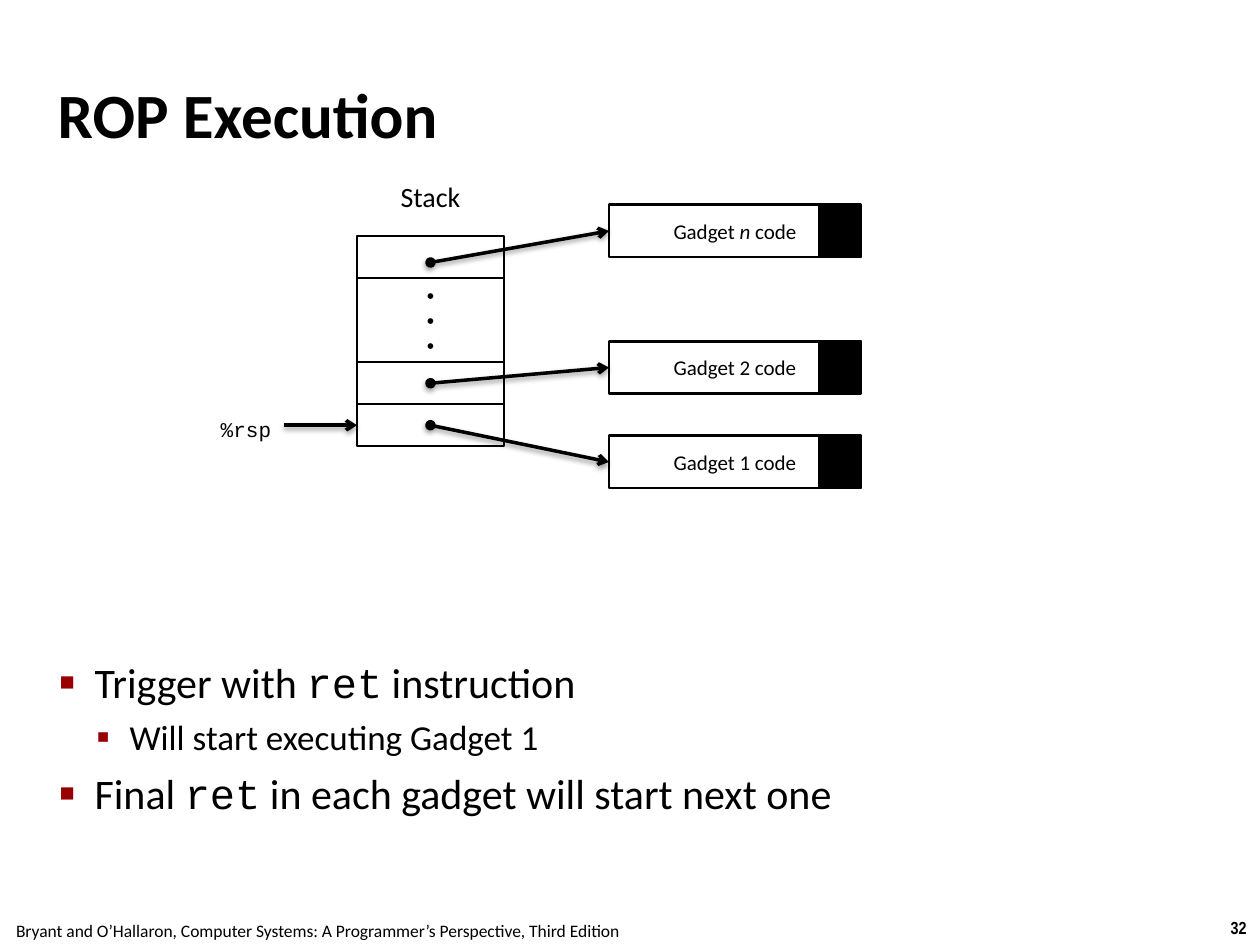
from lxml import etree
from pptx import Presentation
from pptx.dml.color import RGBColor
from pptx.enum import shapes, text
from pptx.oxml import ns
from pptx.util import Pt

INK = {"black": "000000", "red": "990000"}
ALIGN = text.PP_ALIGN
MID = text.MSO_ANCHOR.MIDDLE


def color(name):
    return RGBColor.from_string(INK[name])


def sub(node, tag, **attrs):
    return etree.SubElement(node, ns.qn("a:" + tag), attrs)


class Deck:
    font = "Calibri"
    mono = "Courier New"

    def __init__(self):
        self.prs = Presentation()
        self.prs.slide_width, self.prs.slide_height = Pt(720), Pt(540)
        self.slide = self.prs.slides.add_slide(self.prs.slide_layouts[1])

    def style(self, run, size, font=None, bold=False, italic=False):
        run.font.size = Pt(size)
        run.font.name = font or self.font
        run.font.bold = bold
        run.font.italic = italic
        run.font.color.rgb = color("black")

    def fill_in(self, para, words, size, align=ALIGN.CENTER, mark=None, **look):
        para.alignment = align
        for i, part in enumerate(words.split("|")):
            run = para.add_run()
            run.text = part
            self.style(run, size, **(mark if i % 2 else look))

    def frame(self, shape, inset):
        frame = shape.text_frame
        frame.auto_size = text.MSO_AUTO_SIZE.NONE
        frame.margin_left = frame.margin_right = Pt(inset)
        frame.margin_top = frame.margin_bottom = Pt(inset)
        return frame

    def place(self, shape, x, y, w, h):
        shape.left, shape.top = Pt(x), Pt(y)
        shape.width, shape.height = Pt(w), Pt(h)

    def title(self, words, *box):
        shape = self.slide.shapes.title
        self.place(shape, *box)
        frame = self.frame(shape, 3)
        frame.vertical_anchor = MID
        self.fill_in(frame.paragraphs[0], words, 36, ALIGN.LEFT, bold=True)

    def body(self, items, *box):
        looks = [(24, 20, -20, 6, "■", "60000"), (20, 40, -19, 5, "▪", "110000")]
        shape = self.slide.placeholders[1]
        self.place(shape, *box)
        frame = self.frame(shape, 3)
        for i, (level, words) in enumerate(items):
            para = frame.add_paragraph() if i else frame.paragraphs[0]
            size, left, hang, gap, sign, scale = looks[level]
            para.level = level
            para.space_before = Pt(gap)
            self.fill_in(para, words, size, ALIGN.LEFT, {"font": self.mono})
            props = para._p.get_or_add_pPr()
            props.set("marL", str(Pt(left)))
            props.set("indent", str(Pt(hang)))
            sub(sub(props, "buClr"), "srgbClr", val=INK["red"])
            sub(props, "buSzPct", val=scale)
            sub(props, "buFont", typeface="Arial")
            sub(props, "buChar", char=sign)

    def label(self, words, x, y, w, h, size, wrap=True, anchor=None, **look):
        frame = self.slide.shapes.add_textbox(Pt(x), Pt(y), Pt(w), Pt(h)).text_frame
        frame.word_wrap = wrap
        if anchor:
            frame.vertical_anchor = anchor
        self.fill_in(frame.paragraphs[0], words, size, **look)

    def rect(self, x, y, w, h, line=1, fill=None):
        shape = self.slide.shapes.add_shape(
            shapes.MSO_SHAPE.RECTANGLE, Pt(x), Pt(y), Pt(w), Pt(h))
        shape.shadow.inherit = False
        if fill:
            shape.fill.solid()
            shape.fill.fore_color.rgb = color(fill)
        else:
            shape.fill.background()
        shape.line.color.rgb = color("black")
        shape.line.width = Pt(line)
        shape.text_frame.vertical_anchor = MID
        return shape

    def dots(self, shape):
        frame = self.frame(shape, 0)
        frame.word_wrap = False
        frame.text = "•\n•\n•"
        for para in frame.paragraphs:
            para.alignment = ALIGN.CENTER
            self.style(para.runs[0], 12, "Arial")

    def gadget(self, words, x, y, w, h, end):
        self.rect(x + w - end, y, end, h, fill="black")
        shape = self.rect(x, y, w, h, 1.5)
        self.fill_in(shape.text_frame.paragraphs[0], words, 12, mark={"italic": True})

    def arrow(self, x1, y1, x2, y2, dot=True):
        link = self.slide.shapes.add_connector(
            shapes.MSO_CONNECTOR.STRAIGHT, Pt(x1), Pt(y1), Pt(x2), Pt(y2))
        link.line.color.rgb = color("black")
        link.line.width = Pt(2)
        line = link.line._get_or_add_ln()
        if dot:
            sub(line, "headEnd", type="oval")
        sub(line, "tailEnd", type="arrow")
        glow = sub(sub(link._element.spPr, "effectLst"), "outerShdw",
                   blurRad=str(Pt(3.1)), dist=str(Pt(1.6)),
                   dir="5400000", rotWithShape="0")
        sub(sub(glow, "srgbClr", val=INK["black"]), "alpha", val="38000")


def main():
    deck = Deck()
    deck.label("32", 695.5, 520.5, 24.5, 19.5, 10, wrap=False,
               font="Arial Narrow", bold=True)
    deck.label("Bryant and O’Hallaron, Computer Systems: "
               "A Programmer’s Perspective, Third Edition",
               -1.5, 522, 366, 19.5, 10, wrap=False)
    deck.title("ROP Execution", 30, 20, 660, 90)
    deck.body([(0, "Trigger with |ret| instruction"),
               (1, "Will start executing Gadget 1"),
               (0, "Final |ret| in each gadget will start next one")],
              31, 372, 622, 127)

    left, top, wide, row = 204, 135, 84, 24
    cells = [deck.rect(left, top + row * at, wide, row * span)
             for at, span in [(4, 1), (3, 1), (1, 2), (0, 1)]]
    deck.dots(cells[2])

    edge, tall = 348, 30
    mid = left + wide / 2
    rsp = top + 4.5 * row
    goals = [("Gadget 1 code", 249, rsp),
             ("Gadget 2 code", 195, top + 3.5 * row),
             ("Gadget |n| code", 117, 150)]
    for words, y, _ in goals:
        deck.gadget(words, edge, y, 144, tall, 24)
    for _, y, start in goals:
        deck.arrow(mid, start, edge, y + tall / 2)
    deck.arrow(162, rsp, left, rsp, dot=False)

    deck.label("Stack", left, 99, wide, 27, 16)
    deck.label("%rsp", 78, 233, wide, row, 12, anchor=MID,
               align=ALIGN.RIGHT, font=deck.mono)
    deck.prs.save("out.pptx")


if __name__ == "__main__":
    main()
